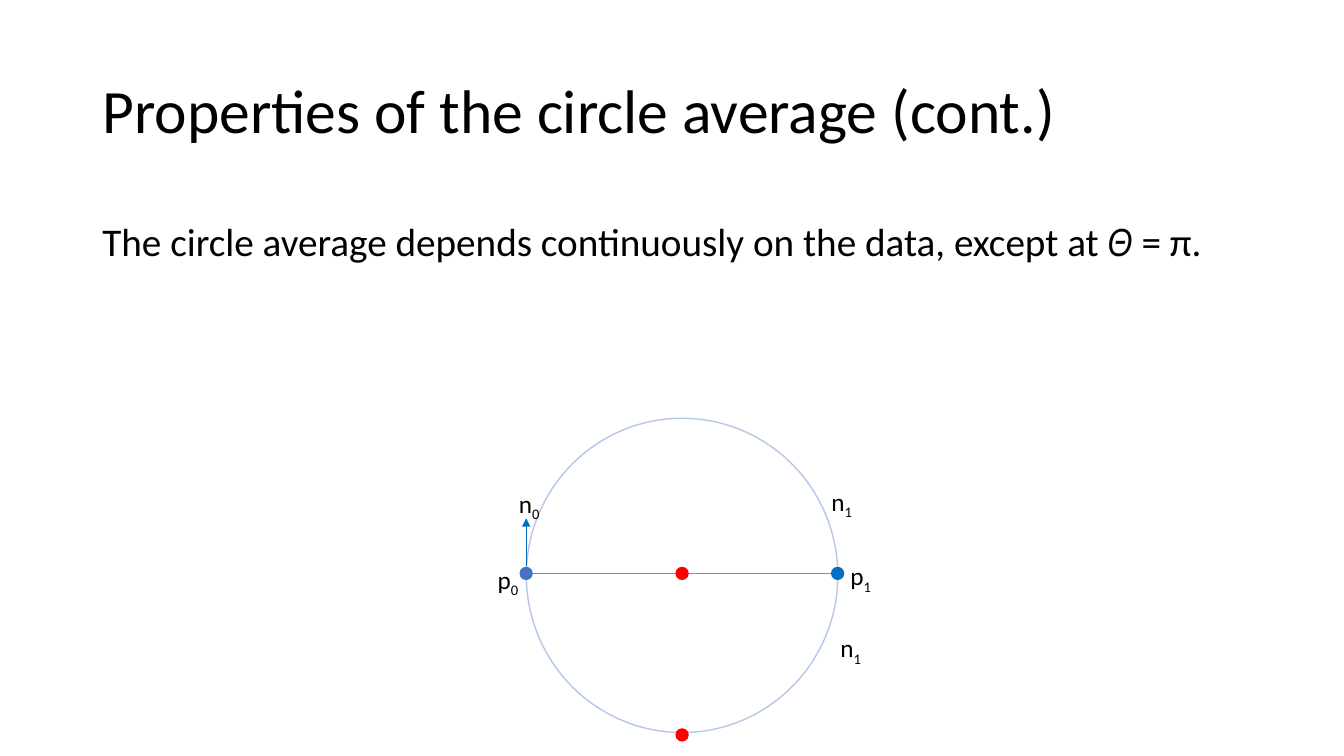
from lxml.etree import SubElement
from pptx import Presentation
from pptx.dml.color import RGBColor
from pptx.enum.shapes import MSO_CONNECTOR as Connector, MSO_SHAPE as Preset
from pptx.enum.text import MSO_ANCHOR as Anchor, MSO_AUTO_SIZE as AutoSize
from pptx.oxml.ns import qn
from pptx.util import Cm, Pt

BLACK = RGBColor(0x00, 0x00, 0x00)
PALE_BLUE = RGBColor(0xB4, 0xC7, 0xE7)
MID_BLUE = RGBColor(0x44, 0x72, 0xC4)
DEEP_BLUE = RGBColor(0x00, 0x70, 0xC0)
CHORD_BLUE = RGBColor(0x5B, 0x9B, 0xD5)
RED = RGBColor(0xFF, 0x00, 0x00)

deck = Presentation()
deck.slide_width, deck.slide_height = Cm(33.87), Cm(19.05)
slide = deck.slides.add_slide(deck.slide_layouts[6])


def add_ellipse(center_x, center_y, width, height, outline, fill=None):
    ellipse = slide.shapes.add_shape(
        Preset.OVAL, Cm(center_x - width / 2), Cm(center_y - height / 2), Cm(width), Cm(height))
    ellipse.shadow.inherit = False
    ellipse.line.color.rgb = outline
    ellipse.line.width = Pt(1)
    if fill is None:
        ellipse.fill.background()
    else:
        ellipse.fill.solid()
        ellipse.fill.fore_color.rgb = fill


def add_text(left, top, width, height, pieces, size, frame_format, paragraph_format):
    """Add one paragraph; each piece is its words, its font values and its baseline shift."""
    frame = slide.shapes.add_textbox(Cm(left), Cm(top), Cm(width), Cm(height)).text_frame
    for name, value in frame_format.items():
        setattr(frame, name, value)
    paragraph = frame.paragraphs[0]
    for name, value in paragraph_format.items():
        setattr(paragraph, name, value)
    for words, font_format, baseline in pieces:
        run = paragraph.add_run()
        run.text = words
        run.font.color.rgb = BLACK
        for name, value in {"name": "Calibri", "size": Pt(size), **font_format}.items():
            setattr(run.font, name, value)
        if baseline:
            run.font._element.set("baseline", str(baseline))


# Circle with its chord and the normal at p0
CENTER_X, AXIS_Y = 17.19, 14.45
LEFT_X, RIGHT_X = 13.26, 21.11
add_ellipse(CENTER_X, 14.5, 7.85, 7.92, PALE_BLUE)

segments = [
    (LEFT_X, AXIS_Y, RIGHT_X, AXIS_Y, CHORD_BLUE, False),
    (LEFT_X, 14.25, LEFT_X, 13.06, DEEP_BLUE, True),
]
for x1, y1, x2, y2, color, has_arrow in segments:
    segment = slide.shapes.add_connector(Connector.STRAIGHT, Cm(x1), Cm(y1), Cm(x2), Cm(y2))
    segment.line.color.rgb = color
    segment.line.width = Pt(0.5)
    if has_arrow:
        SubElement(segment.line._get_or_add_ln(), qn("a:tailEnd"), type="triangle")
    SubElement(segment._element.spPr, qn("a:effectLst"))

# Title and statement
add_text(2.33, 1.01, 29.21, 3.68, [("Properties of the circle average (cont.)", {}, 0)], 44,
         {"word_wrap": True, "vertical_anchor": Anchor.MIDDLE}, {"line_spacing": 0.9})
statement = [
    ("The circle average depends continuously on the data, except at ", {}, 0),
    ("Θ ", {"name": "Arial Narrow", "italic": True}, 0),
    ("= π.", {}, 0),
]
add_text(2.33, 5.48, 29.21, 1.78, statement, 28,
         {"word_wrap": True}, {"line_spacing": 0.9, "space_before": Pt(10)})

# Points on the circle and its averages
points = [
    (LEFT_X, AXIS_Y, MID_BLUE),
    (RIGHT_X, AXIS_Y, DEEP_BLUE),
    (CENTER_X, AXIS_Y, RED),
    (CENTER_X, 18.52, RED),
]
for x, y, color in points:
    add_ellipse(x, y, 0.3, 0.3, color, color)

point_labels = [
    ("n", "0", 12.83, 12.17),
    ("p", "0", 12.29, 14.1),
    ("n", "1", 20.7, 12.12),
    ("p", "1", 21.18, 14.0),
    ("n", "1", 20.93, 15.82),
]
for letter, index, left, top in point_labels:
    add_text(left, top, 1.07, 1.02, [(letter, {}, 0), (index, {}, -25000)], 18,
             {"word_wrap": False, "auto_size": AutoSize.SHAPE_TO_FIT_TEXT}, {})

deck.save("out.pptx")
